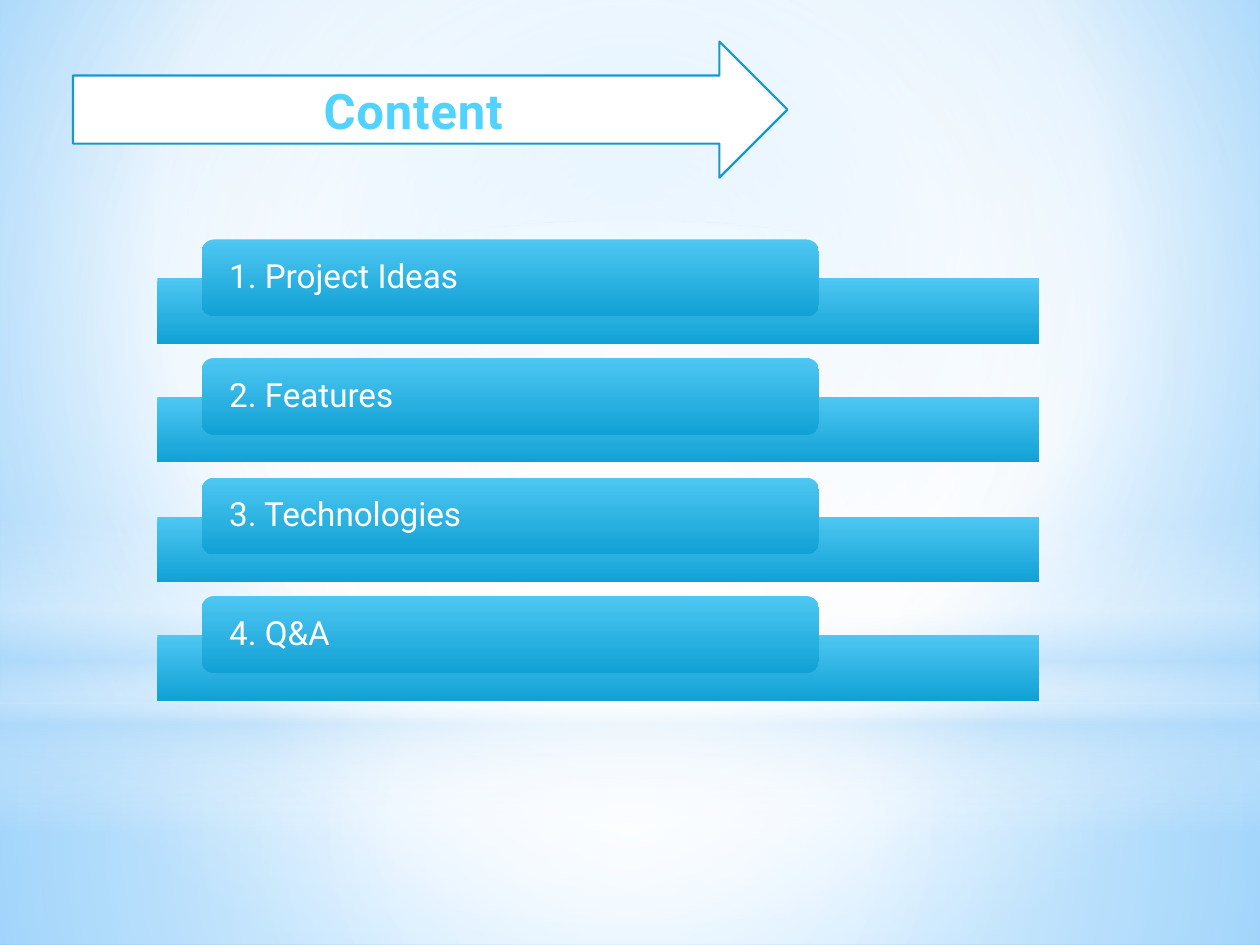
import dataclasses
import typing

import lxml.etree
import pptx
import pptx.dml.color
import pptx.enum.shapes
import pptx.enum.text
import pptx.oxml.ns
import pptx.util

SCALE = 9144  # EMU in one px, at 100 px to the inch
qn = pptx.oxml.ns.qn
Kind = pptx.enum.shapes.MSO_SHAPE
Align = pptx.enum.text.PP_ALIGN
Anchor = pptx.enum.text.MSO_ANCHOR


class Stop(typing.NamedTuple):
    pos: int
    color: str
    alpha: int = 100


@dataclasses.dataclass(frozen=True)
class Grad:
    """Runs top to bottom, or out from a focus (left, top, right, bottom in %)."""
    stops: tuple[Stop, ...]
    focus: tuple[int, int, int, int] | None = None


class Box(typing.NamedTuple):
    x: int
    y: int
    w: int
    h: int


class Layer(typing.NamedTuple):
    kind: typing.Any
    box: Box
    grad: Grad


@dataclasses.dataclass(frozen=True)
class Theme:
    font: str = "Roboto"
    white: str = "FFFFFF"
    haze: str = "B4DCFA"
    edge: str = "1999C6"
    title: int = 28
    item: int = 19
    line: float = 1.25
    bar: Grad = Grad((Stop(0, "4EC7F2"), Stop(100, "11A1D4")))
    head: Grad = Grad((Stop(25, "52D2FF"), Stop(100, "20A0CE")))
    back: Grad = Grad((Stop(0, "9ED5FF"), Stop(60, "FFFFFF"), Stop(100, "5BB9FF")),
                      (20, 10, 20, 60))


THEME = Theme()
MID = (50, 50, 50, 50)
WHITE, HAZE = THEME.white, THEME.haze
LAYERS = (
    Layer(Kind.RECTANGLE, Box(0, 558, 1000, 192),
          Grad((Stop(0, WHITE, 91), Stop(37, WHITE, 76), Stop(100, HAZE, 79)), MID)),
    Layer(Kind.RECTANGLE, Box(0, 0, 1000, 558),
          Grad((Stop(0, WHITE, 89), Stop(48, WHITE, 62), Stop(100, HAZE, 79)), MID)),
    Layer(Kind.RECTANGLE, Box(0, 412, 1000, 250),
          Grad((Stop(0, WHITE, 0), Stop(29, WHITE, 30), Stop(45, HAZE, 40),
                Stop(55, WHITE, 26), Stop(65, HAZE, 60), Stop(100, WHITE, 0)))),
    Layer(Kind.OVAL, Box(0, 175, 1000, 558),
          Grad((Stop(0, WHITE), Stop(56, WHITE, 0)), MID)),
)
ARROW = Box(58, 33, 567, 108)
BAR = Box(125, 221, 700, 52)
TAB = Box(160, 190, 490, 61)
PITCH = 283 / 3
ITEMS = ("1. Project Ideas", "2. Features", "3. Technologies", "4. Q&A")


def px(n: int) -> int:
    return n * SCALE


def rgb(color: str) -> pptx.dml.color.RGBColor:
    return pptx.dml.color.RGBColor.from_string(color)


def put(obj: typing.Any, values: dict[str, typing.Any]) -> None:
    """Set each named attribute of the object."""
    for name, value in values.items():
        setattr(obj, name, value)


def add(node: typing.Any, tag: str, **attrs: typing.Any) -> typing.Any:
    """Append an XML child with the given attributes."""
    texts = {key: str(value) for key, value in attrs.items()}
    return lxml.etree.SubElement(node, qn(tag), texts)


def blend(fill: typing.Any, host: typing.Any, grad: Grad) -> None:
    """Give the fill inside the host element a gradient."""
    fill.gradient()
    node = next(host.iter(qn("a:gradFill")))
    for child in list(node):
        node.remove(child)
    stops = add(node, "a:gsLst")
    for stop in grad.stops:
        mark = add(stops, "a:gs", pos=stop.pos * 1000)
        color = add(mark, "a:srgbClr", val=stop.color)
        if stop.alpha < 100:
            add(color, "a:alpha", val=stop.alpha * 1000)
    if grad.focus:
        route = add(node, "a:path", path="circle")
        sides = {side: n * 1000 for side, n in zip("ltrb", grad.focus)}
        add(route, "a:fillToRect", **sides)
    else:
        add(node, "a:lin", ang=90 * 60000, scaled=0)


def draw(slide: typing.Any, kind: typing.Any, box: Box,
         grad: Grad | None = None) -> typing.Any:
    """Add a shape without line or shadow, white unless a gradient is given."""
    shape = slide.shapes.add_shape(kind, *map(px, box))
    shape.shadow.inherit = False
    shape.line.fill.background()
    if grad:
        blend(shape.fill, shape.element.spPr, grad)
    else:
        shape.fill.solid()
        shape.fill.fore_color.rgb = rgb(THEME.white)
    return shape


def write(shape: typing.Any, text: str, size: int, bold: bool,
          frame: dict[str, typing.Any], para: dict[str, typing.Any]) -> typing.Any:
    """Fill the shape with one paragraph and return its run."""
    put(shape.text_frame, {"word_wrap": True, "vertical_anchor": Anchor.MIDDLE, **frame})
    line = shape.text_frame.paragraphs[0]
    put(line, para)
    run = line.add_run()
    run.text = text
    put(run.font, {"name": THEME.font, "size": pptx.util.Pt(size), "bold": bold})
    return run


def title(slide: typing.Any) -> None:
    arrow = draw(slide, Kind.RIGHT_ARROW, ARROW)
    arrow.line.color.rgb = rgb(THEME.edge)
    arrow.line.width = pptx.util.Pt(THEME.line)
    run = write(arrow, "Content", THEME.title, True, {}, {"alignment": Align.CENTER})
    props = run.font._element
    blend(run.font.fill, props, THEME.head)
    props.set("spc", "50")


def entry(slide: typing.Any, text: str, drop: int) -> None:
    """Draw a bar with its labelled tab, moved down by the drop."""
    draw(slide, Kind.RECTANGLE, BAR._replace(y=BAR.y + drop), THEME.bar)
    tab = draw(slide, Kind.ROUNDED_RECTANGLE, TAB._replace(y=TAB.y + drop), THEME.bar)
    frame = {"margin_left": px(19), "margin_right": px(19),
             "margin_top": 0, "margin_bottom": 0}
    run = write(tab, text, THEME.item, False, frame,
                {"alignment": Align.LEFT, "line_spacing": 0.9})
    run.font.color.rgb = rgb(THEME.white)


def main() -> None:
    deck = pptx.Presentation()
    put(deck, {"slide_width": px(1000), "slide_height": px(750)})
    slide = deck.slides.add_slide(deck.slide_layouts[6])
    blend(slide.background.fill, slide.element, THEME.back)
    for layer in LAYERS:
        draw(slide, *layer)
    title(slide)
    for i, text in enumerate(ITEMS):
        entry(slide, text, round(i * PITCH))
    deck.save("out.pptx")


if __name__ == "__main__":
    main()
